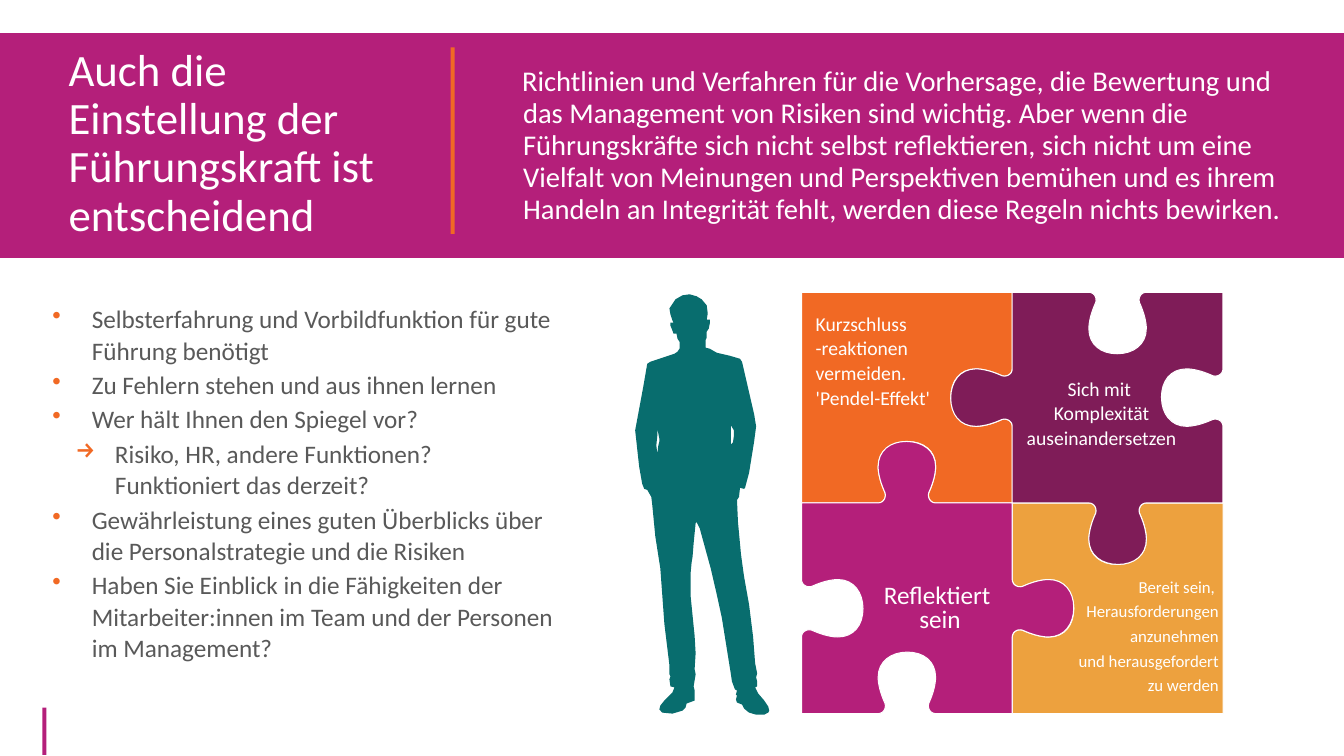
from dataclasses import dataclass
from lxml import etree
from pptx import Presentation
from pptx.dml.color import RGBColor
from pptx.enum.shapes import MSO_SHAPE
from pptx.enum.text import MSO_ANCHOR, MSO_AUTO_SIZE, PP_ALIGN
from pptx.oxml.ns import qn
from pptx.util import Emu, Pt

PX = 9144  # EMU per px, 100 px to the inch
RECT = MSO_SHAPE.RECTANGLE
TOP, MID = MSO_ANCHOR.TOP, MSO_ANCHOR.MIDDLE
LEFT, CENTER, RIGHT = PP_ALIGN.LEFT, PP_ALIGN.CENTER, PP_ALIGN.RIGHT
FIXED = MSO_AUTO_SIZE.NONE
FONT = "Calibri"
COLORS = {"pink": "B41F7A", "orange": "F16924", "gold": "EDA13E", "plum": "7F1C58",
          "teal": "086D6E", "gray": "595959", "white": "FFFFFF"}

Point = tuple[float, float]
Box = tuple[int, int, int, int]


@dataclass
class Piece:
    col: int
    row: int
    color: str
    sides: tuple[int, int, int, int]  # top, right, bottom, left: 1 knob, -1 notch


@dataclass
class Label:
    box: Box
    lines: list[str]
    size: int
    align: PP_ALIGN
    wrap: bool = True


@dataclass
class Item:
    text: str
    mark: str = "•"
    left: int = 39


# Puzzle: one grid of square pieces with the same knob on each side
SIDE, GRID_X, GRID_Y = 209, 795, 290
KNOB = [  # Bezier curves as (along, depth), starting at (76, 0)
    ((82, 0), (85, 7), (82, 12)), ((78, 21), (76, 30), (76, 36)),
    ((76, 52), (88, 61), (104, 61)), ((120, 61), (133, 52), (133, 36)),
    ((133, 30), (131, 21), (127, 12)), ((124, 7), (127, 0), (133, 0))]
PIECES = [
    Piece(0, 0, "orange", (0, -1, -1, 0)),
    Piece(1, 1, "gold", (-1, 0, 0, -1)),
    Piece(1, 0, "plum", (-1, -1, 1, 1)),
    Piece(0, 1, "pink", (1, 1, -1, -1))]
LABELS = [
    Label((872, 577, 115, 55), ["Reflektiert", " sein"], 18, CENTER, False),
    Label((995, 370, 195, 78), ["Sich mit ", "Komplexität auseinandersetzen"], 14, CENTER),
    Label((805, 305, 195, 104),
          ["Kurzschluss", "-reaktionen", "vermeiden. \v'Pendel-Effekt'"], 14, LEFT),
    Label((1033, 564, 180, 129),
          ["Bereit sein, ", "Herausforderungen anzunehmen\v und herausgefordert",
           " zu werden"], 12, RIGHT)]

ITEMS = [
    Item("Selbsterfahrung und Vorbildfunktion für gute Führung benötigt"),
    Item("Zu Fehlern stehen und aus ihnen lernen"),
    Item("Wer hält Ihnen den Spiegel vor?"),
    Item("Risiko, HR, andere Funktionen? \vFunktioniert das derzeit?", "→", 62),
    Item("Gewährleistung eines guten Überblicks über die Personalstrategie und die Risiken"),
    Item("Haben Sie Einblick in die Fähigkeiten der Mitarbeiter:innen im Team "
         "und der Personen im Management?")]
INTRO = ("Richtlinien und Verfahren für die Vorhersage, die Bewertung und das Management von "
         "Risiken sind wichtig. Aber wenn die Führungskräfte sich nicht selbst reflektieren, "
         "sich nicht um eine Vielfalt von Meinungen und Perspektiven bemühen und es ihrem "
         "Handeln an Integrität fehlt, werden diese Regeln nichts bewirken.")

# Standing man: body outline, then the gaps beside both arms
BODY = [
    (749, 682), (751, 681), (751, 676), (750, 672), (751, 668), (749, 658), (747, 632),
    (743, 600), (738, 572), (735, 550), (732, 518), (731, 496), (733, 493), (734, 484),
    (738, 485), (739, 484), (743, 469), (748, 438), (750, 423), (748, 411), (736, 359),
    (734, 356), (724, 353), (711, 350), (704, 346), (700, 345), (700, 337), (701, 335),
    (701, 329), (703, 326), (704, 321), (704, 317), (701, 317), (702, 311), (701, 303),
    (696, 297), (691, 294), (684, 292), (677, 293), (670, 297), (664, 306), (665, 312),
    (667, 318), (668, 320), (665, 320), (665, 323), (667, 328), (668, 331), (671, 331),
    (672, 336), (674, 339), (674, 346), (672, 349), (669, 351), (645, 359), (642, 361),
    (638, 384), (630, 427), (634, 463), (637, 480), (639, 485), (642, 486), (646, 493),
    (647, 501), (650, 532), (655, 564), (659, 619), (664, 660), (664, 666), (664, 669),
    (665, 671), (664, 674), (665, 681), (669, 682), (667, 687), (659, 695), (655, 700),
    (654, 704), (657, 707), (667, 708), (677, 705), (680, 702), (681, 698), (689, 695),
    (689, 689), (689, 685), (688, 681), (690, 669), (689, 664), (690, 648), (689, 631),
    (685, 591), (685, 569), (686, 558), (687, 552), (688, 539), (690, 519), (691, 518),
    (694, 524), (705, 564), (711, 590), (716, 613), (725, 669), (726, 676), (729, 684),
    (731, 685), (730, 689), (731, 690), (730, 694), (731, 697), (736, 699), (738, 703),
    (743, 707), (750, 709), (758, 709), (762, 707), (763, 705), (762, 701), (758, 695),
    (752, 688)]
GAPS = [
    [(654, 438), (653, 442), (652, 450), (651, 442), (652, 432), (652, 425), (654, 435)],
    [(728, 432), (727, 439), (725, 441), (725, 422), (728, 427)]]


def rgb(name: str) -> RGBColor:
    return RGBColor.from_string(COLORS[name])


def area(box: Box) -> list[Emu]:
    return [Emu(n * PX) for n in box]


def write(shape, items: list[Item], size: float = 18, color: str = "white",
          align: PP_ALIGN = LEFT, anchor: MSO_ANCHOR = TOP, wrap: bool = True,
          gap: float = 0, pitch=1.0, hang: int = 0, bullet: bool = False,
          inset: tuple[int, int] = (10, 5)) -> None:
    frame = shape.text_frame
    frame.auto_size, frame.word_wrap, frame.vertical_anchor = FIXED, wrap, anchor
    frame.margin_left = frame.margin_right = Emu(inset[0] * PX)
    frame.margin_top = frame.margin_bottom = Emu(inset[1] * PX)
    for i, item in enumerate(items):
        para = frame.add_paragraph() if i else frame.paragraphs[0]
        para.text = item.text
        if hang:
            props = para._p.get_or_add_pPr()
            props.set("marL", str(item.left * PX))
            props.set("indent", str(-hang * PX))
            if bullet:
                tint = etree.SubElement(props, qn("a:buClr"))
                etree.SubElement(tint, qn("a:srgbClr"), val=COLORS["orange"])
                etree.SubElement(props, qn("a:buChar"), char=item.mark)
        para.alignment, para.line_spacing = align, pitch
        para.space_before = Pt(gap if i else 0)
        for run in para.runs:
            run.font.name, run.font.size = FONT, Pt(size)
            run.font.color.rgb = rgb(color)


def paint(shape, color: str, edge: bool = False) -> None:
    shape.shadow.inherit = False
    shape.fill.solid()
    shape.fill.fore_color.rgb = rgb(color)
    if edge:
        shape.line.color.rgb = rgb("white")
        shape.line.width = Pt(0.75)
    else:
        shape.line.fill.background()


def bar(slide, box: Box, color: str):
    shape = slide.shapes.add_shape(RECT, *area(box))
    paint(shape, color)
    return shape


def trace(slide, loops: list[list[Point]], color: str, edge: bool = False) -> None:
    paths = [[(x * PX, y * PX) for x, y in loop] for loop in loops]
    pen = slide.shapes.build_freeform(*paths[0][0], scale=1.0)
    for i, path in enumerate(paths):
        if i:
            pen.move_to(*path[0])
        pen.add_line_segments(path[1:], close=True)
    paint(pen.convert_to_shape(), color, edge)


def curve(steps: int = 8) -> list[Point]:
    dots: list[Point] = [(76, 0)]
    for b, c, d in KNOB:
        a = dots[-1]
        for t in (n / steps for n in range(1, steps + 1)):
            u = 1 - t
            dots.append(tuple(u**3 * a[k] + 3 * u * u * t * b[k] + 3 * u * t * t * c[k]
                              + t**3 * d[k] for k in (0, 1)))
    return dots


def rim(piece: Piece) -> list[Point]:
    x, y = GRID_X + piece.col * SIDE, GRID_Y + piece.row * SIDE
    dx, dy = 1, 0
    dots: list[Point] = []
    for sign in piece.sides:  # clockwise, outward is (dy, -dx)
        dots.append((x, y))
        if sign:
            dots += [(x + dx * s + dy * sign * d, y + dy * s - dx * sign * d)
                     for s, d in curve()]
        x, y = x + dx * SIDE, y + dy * SIDE
        dx, dy = -dy, dx
    return dots


def main() -> None:
    deck = Presentation()
    deck.slide_width, deck.slide_height = Emu(1333 * PX), Emu(750 * PX)
    slide = deck.slides.add_slide(deck.slide_layouts[5])

    # Header band, title and intro
    title = slide.shapes.title
    title.left, title.top, title.width, title.height = area((58, 42, 332, 231))
    write(title, [Item("Auch die Einstellung der Führungskraft ist entscheidend")],
          size=32, pitch=0.9)
    band = bar(slide, (0, 33, 1333, 223), "pink")
    title.element.addprevious(band.element)
    bar(slide, (447, 47, 4, 185), "orange")
    bar(slide, (42, 702, 4, 47), "pink")
    intro = slide.shapes.add_textbox(*area((508, 60, 777, 196)))
    write(intro, [Item(INTRO, left=1)], size=20.4, pitch=Pt(22.8), hang=1)

    # Puzzle and its labels
    for piece in PIECES:
        trace(slide, [rim(piece)], piece.color, edge=True)
    for label in LABELS:
        box = slide.shapes.add_textbox(*area(label.box))
        write(box, [Item(line) for line in label.lines], size=label.size, align=label.align,
              anchor=MID, wrap=label.wrap, pitch=Pt(17.6), inset=(4, 2))

    # Man and bullet list
    trace(slide, [BODY, *GAPS], "teal")
    points = slide.shapes.add_textbox(*area((48, 298, 508, 356)))
    write(points, ITEMS, color="gray", gap=2.2, pitch=Pt(22.4), hang=39, bullet=True,
          inset=(4, 2))
    deck.save("out.pptx")


if __name__ == "__main__":
    main()
